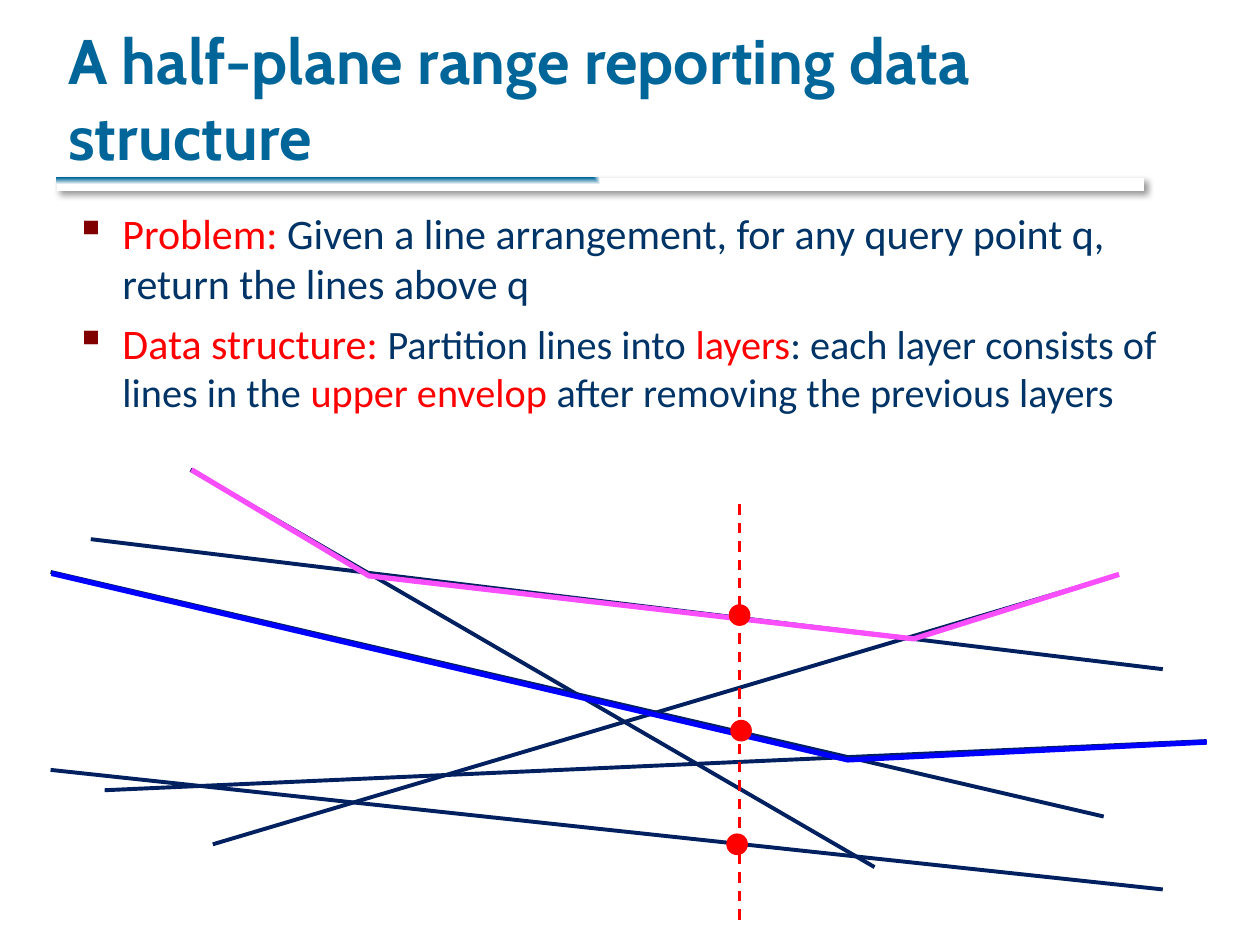
import dataclasses
import typing

import lxml.etree
import pptx
import pptx.dml.color
import pptx.enum.dml
import pptx.enum.shapes
import pptx.enum.text
import pptx.oxml
import pptx.oxml.ns
import pptx.util

Cm = pptx.util.Cm
Pt = pptx.util.Pt
qn = pptx.oxml.ns.qn
Point = tuple[float, float]


@dataclasses.dataclass(frozen=True)
class Theme:
    title: str = "006699"
    text: str = "003366"
    accent: str = "FF0000"
    bullet: str = "800000"
    line: str = "002060"
    first_layer: str = "F84EFC"
    second_layer: str = "0000FF"
    title_font: str = "Cabin"
    body_font: str = "Calibri"
    title_size: float = 36
    problem_size: float = 24
    structure_size: float = 23


THEME = Theme()


class Run(typing.NamedTuple):
    text: str
    size: float
    color: str


class Segment(typing.NamedTuple):
    start: Point
    end: Point
    color: str = THEME.line
    width: float = 2.25
    dash: typing.Any = None


class Envelope(typing.NamedTuple):
    points: list[Point]
    color: str


TITLE = "A half-plane range reporting data structure"
BULLETS = [
    [Run("Problem:", THEME.problem_size, THEME.accent),
     Run(" Given a line arrangement, for any query point q, return the lines above q",
         THEME.problem_size, THEME.text)],
    [Run("Data structure: ", THEME.problem_size, THEME.accent),
     Run("Partition lines into ", THEME.structure_size, THEME.text),
     Run("layers", THEME.structure_size, THEME.accent),
     Run(": each layer consists of lines in the ", THEME.structure_size, THEME.text),
     Run("upper envelop ", THEME.structure_size, THEME.accent),
     Run("after removing the previous layers", THEME.structure_size, THEME.text)],
]
SEGMENTS = [
    Segment((4.29, 17.02), (22.25, 11.68)),
    Segment((2.11, 15.93), (24.31, 14.94)),
    Segment((1.02, 11.53), (22.25, 16.46)),
    Segment((3.84, 9.47), (17.63, 17.48)),
    Segment((1.83, 10.87), (23.44, 13.49)),
    Segment((1.02, 15.52), (23.44, 17.93)),
    # Vertical query line
    Segment((14.91, 18.54), (14.91, 10.13), THEME.accent, 1.5,
            pptx.enum.dml.MSO_LINE.DASH),
]
ENVELOPES = [
    Envelope([(3.86, 9.47), (7.44, 11.61), (18.42, 12.88), (22.56, 11.58)],
             THEME.first_layer),
    Envelope([(1.04, 11.56), (17.09, 15.32), (24.33, 14.96)], THEME.second_layer),
]
CROSSINGS = [(14.86, 17.02), (14.91, 12.4), (14.94, 14.73)]
DOT_SIZE = 0.41

BAR_STYLE = """<p:spPr xmlns:p="http://schemas.openxmlformats.org/presentationml/2006/main"
 xmlns:a="http://schemas.openxmlformats.org/drawingml/2006/main">
 <a:gradFill rotWithShape="0"><a:gsLst>
  <a:gs pos="0"><a:srgbClr val="006699"/></a:gs>
  <a:gs pos="100000"><a:srgbClr val="FFFFFF"/></a:gs></a:gsLst>
  <a:path path="rect"><a:fillToRect r="100000" b="100000"/></a:path></a:gradFill>
 <a:ln><a:noFill/></a:ln>
 <a:effectLst><a:outerShdw blurRad="50800" dist="38100" dir="2700000">
  <a:srgbClr val="000000"><a:alpha val="40000"/></a:srgbClr></a:outerShdw></a:effectLst>
</p:spPr>"""


def rgb(color: str) -> pptx.dml.color.RGBColor:
    return pptx.dml.color.RGBColor.from_string(color)


def apply_format(target: typing.Any, values: dict[str, typing.Any]) -> None:
    for name, value in values.items():
        setattr(target, name, value)


def format_line(shape: typing.Any, color: str, width: float) -> None:
    shape.line.color.rgb = rgb(color)
    shape.line.width = Pt(width)


def add_title(slide: typing.Any) -> None:
    title = slide.shapes.title
    apply_format(title, {"left": Cm(1.12), "top": Cm(0.43),
                         "width": Cm(21.59), "height": Cm(3.18)})
    apply_format(title.text_frame, {
        "text": TITLE, "word_wrap": True,
        "auto_size": pptx.enum.text.MSO_AUTO_SIZE.NONE,
        "vertical_anchor": pptx.enum.text.MSO_ANCHOR.BOTTOM})
    paragraph = title.text_frame.paragraphs[0]
    paragraph.alignment = pptx.enum.text.PP_ALIGN.LEFT
    font = paragraph.runs[0].font
    apply_format(font, {"name": THEME.title_font, "size": Pt(THEME.title_size),
                        "bold": True})
    font.color.rgb = rgb(THEME.title)
    paragraph.runs[0]._r.get_or_add_rPr().set("spc", "10")


def add_title_bar(slide: typing.Any) -> None:
    bar = slide.shapes.add_shape(pptx.enum.shapes.MSO_SHAPE.RECTANGLE,
                                 Cm(1.14), Cm(3.58), Cm(21.92), Cm(0.28))
    for element in list(pptx.oxml.parse_xml(BAR_STYLE)):
        bar._element.spPr.append(element)


def add_bullets(slide: typing.Any, bullets: list[list[Run]]) -> None:
    box = slide.shapes.add_textbox(Cm(1.27), Cm(4.06), Cm(22.83), Cm(3.25))
    frame = box.text_frame
    frame.word_wrap = True
    for index, runs in enumerate(bullets):
        paragraph = frame.add_paragraph() if index else frame.paragraphs[0]
        paragraph.space_before = Pt(5)
        properties = paragraph._p.get_or_add_pPr()
        indent = Cm(0.95)
        properties.set("marL", str(indent))
        properties.set("indent", str(-indent))
        color = lxml.etree.SubElement(properties, qn("a:buClr"))
        lxml.etree.SubElement(color, qn("a:srgbClr"), val=THEME.bullet)
        lxml.etree.SubElement(properties, qn("a:buChar"), char="▪")
        for content in runs:
            run = paragraph.add_run()
            run.text = content.text
            apply_format(run.font, {"name": THEME.body_font, "size": Pt(content.size)})
            run.font.color.rgb = rgb(content.color)


def add_segment(slide: typing.Any, segment: Segment) -> None:
    connector = slide.shapes.add_connector(
        pptx.enum.shapes.MSO_CONNECTOR.STRAIGHT,
        *(Cm(value) for value in segment.start + segment.end))
    format_line(connector, segment.color, segment.width)
    connector.line.dash_style = segment.dash
    lxml.etree.SubElement(connector._element.spPr, qn("a:effectLst"))


def add_envelope(slide: typing.Any, envelope: Envelope) -> None:
    points = [(Cm(x), Cm(y)) for x, y in envelope.points]
    builder = slide.shapes.build_freeform(*points[0])
    builder.add_line_segments(points[1:], close=False)
    shape = builder.convert_to_shape()
    shape.fill.background()
    shape.shadow.inherit = False
    format_line(shape, envelope.color, 3)


def add_dot(slide: typing.Any, center: Point) -> None:
    left, top = (Cm(value - DOT_SIZE / 2) for value in center)
    dot = slide.shapes.add_shape(pptx.enum.shapes.MSO_SHAPE.OVAL,
                                 left, top, Cm(DOT_SIZE), Cm(DOT_SIZE))
    dot.shadow.inherit = False
    dot.fill.solid()
    dot.fill.fore_color.rgb = rgb(THEME.accent)
    format_line(dot, THEME.accent, 0.75)


def main() -> None:
    presentation = pptx.Presentation()
    apply_format(presentation, {"slide_width": Cm(25.4), "slide_height": Cm(19.05)})
    slide = presentation.slides.add_slide(presentation.slide_layouts[5])

    # Heading and text
    add_title_bar(slide)
    add_title(slide)
    add_bullets(slide, BULLETS)

    # Line arrangement, its layers and the query crossings
    for segment in SEGMENTS:
        add_segment(slide, segment)
    for envelope in ENVELOPES:
        add_envelope(slide, envelope)
    for center in CROSSINGS:
        add_dot(slide, center)
    presentation.save("out.pptx")


if __name__ == "__main__":
    main()
